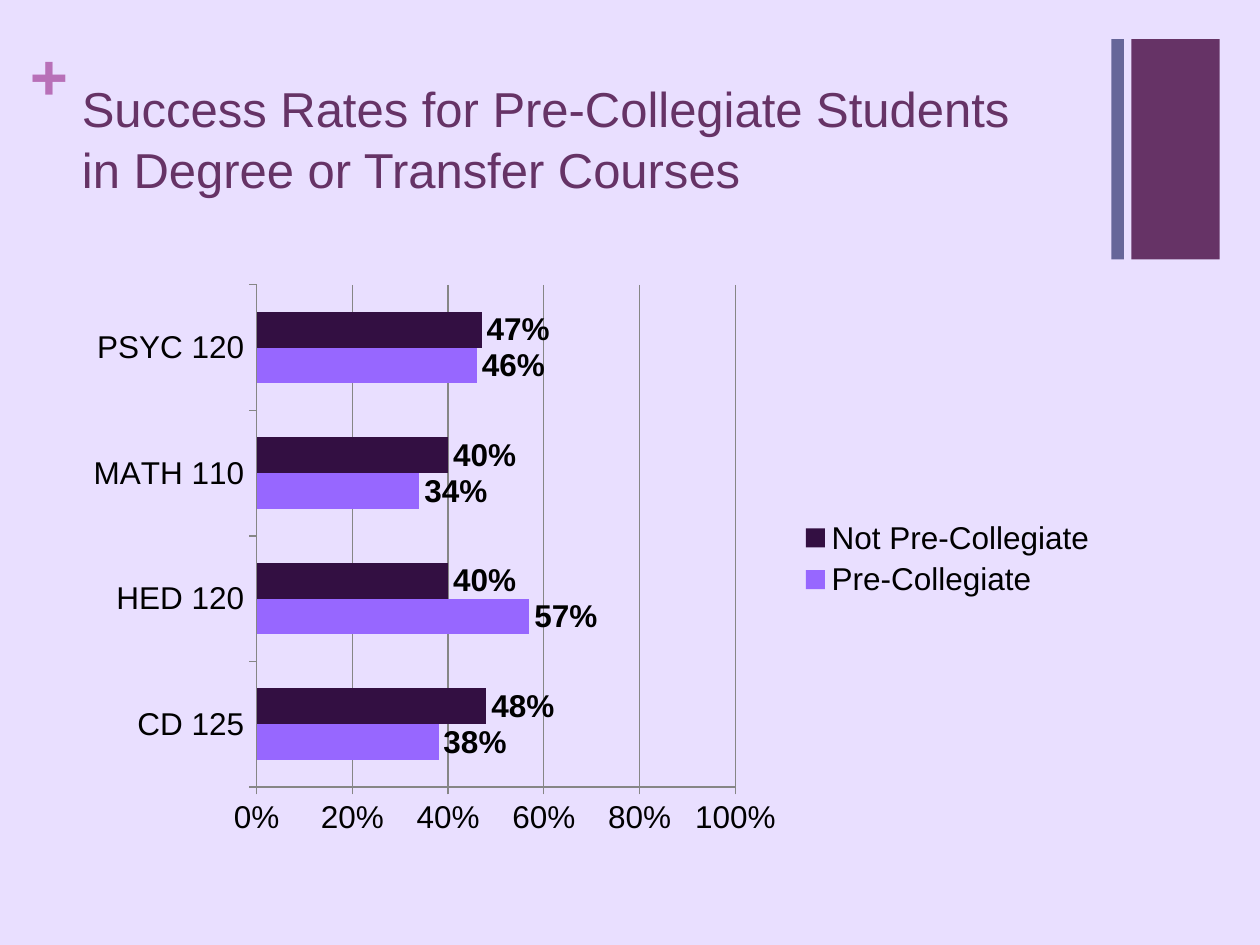
from dataclasses import dataclass

from lxml.etree import SubElement
from pptx import Presentation
from pptx.chart.data import CategoryChartData
from pptx.dml.color import RGBColor
from pptx.enum.chart import XL_CHART_TYPE, XL_LABEL_POSITION, XL_LEGEND_POSITION, XL_TICK_MARK
from pptx.enum.shapes import MSO_SHAPE
from pptx.enum.text import MSO_ANCHOR, MSO_AUTO_SIZE, PP_ALIGN
from pptx.oxml.ns import qn
from pptx.util import Inches, Pt


@dataclass(frozen=True)
class Theme:
    background: str = "E9DFFF"
    plum: str = "663366"
    slate: str = "666699"
    orchid: str = "B870B8"
    violet: str = "9767FF"
    dark: str = "330F42"
    grid: str = "868686"
    black: str = "000000"
    sans: str = "Arial"
    serif: str = "TeX Gyre Bonum"
    title_size: int = 28
    plus_size: int = 36
    chart_size: int = 18


THEME = Theme()
COURSES = ("CD 125", "HED 120", "MATH 110", "PSYC 120")
SERIES = (
    ("Pre-Collegiate", (0.38, 0.57, 0.34, 0.46), THEME.violet),
    ("Not Pre-Collegiate", (0.48, 0.40, 0.40, 0.47), THEME.dark),
)
PLOT_AREA = {"x": 0.18, "y": 0.02, "w": 0.46, "h": 0.88}


def set_values(target, values):
    for name, value in values.items():
        setattr(target, name, value)


def format_font(font, color, **values):
    set_values(font, values)
    font.color.rgb = RGBColor.from_string(color)


def place(shape, left, top, width, height):
    set_values(shape, {"left": Inches(left), "top": Inches(top),
                       "width": Inches(width), "height": Inches(height)})


def add_bar(slide, left, width, color):
    bar = slide.shapes.add_shape(MSO_SHAPE.RECTANGLE, Inches(left), Inches(0.31),
                                 Inches(width), Inches(1.75))
    bar.shadow.inherit = False
    bar.fill.solid()
    bar.fill.fore_color.rgb = RGBColor.from_string(color)
    bar.line.fill.background()


def add_plus(slide):
    box = slide.shapes.add_textbox(Inches(0.24), Inches(0.25), Inches(0.29), Inches(0.61))
    set_values(box.text_frame, {"margin_left": 0, "margin_right": 0,
                                "margin_top": 0, "margin_bottom": 0})
    span = box.text_frame.paragraphs[0].add_run()
    span.text = "+"
    format_font(span.font, THEME.orchid, name=THEME.serif,
                size=Pt(THEME.plus_size), bold=True)


def fill_title(slide):
    title = slide.shapes.title
    place(title, 0.55, 0.53, 8.26, 1.22)
    set_values(title.text_frame, {"auto_size": MSO_AUTO_SIZE.NONE, "word_wrap": True,
                                  "vertical_anchor": MSO_ANCHOR.TOP,
                                  "margin_top": Inches(0.08)})
    para = title.text_frame.paragraphs[0]
    para.text = "Success Rates for Pre-Collegiate Students \vin Degree or Transfer Courses"
    set_values(para, {"alignment": PP_ALIGN.LEFT, "line_spacing": 1.03})
    for span in para.runs:
        format_font(span.font, THEME.plum, name=THEME.sans, size=Pt(THEME.title_size))


def set_plot_area(chart):
    """Fix the inner plot area as fractions of the chart."""
    plot_area = chart.element.find(".//" + qn("c:plotArea"))
    layout = plot_area.find(qn("c:layout"))
    if layout is None:
        layout = SubElement(plot_area, qn("c:layout"))
        plot_area.insert(0, layout)
    manual = SubElement(layout, qn("c:manualLayout"))
    settings = {"layoutTarget": "inner", "xMode": "edge", "yMode": "edge", **PLOT_AREA}
    for name, value in settings.items():
        SubElement(manual, qn(f"c:{name}")).set("val", str(value))


def format_axes(chart):
    grid_color = RGBColor.from_string(THEME.grid)
    value_axis = chart.value_axis
    set_values(value_axis, {"minimum_scale": 0, "maximum_scale": 1, "major_unit": 0.2,
                            "has_major_gridlines": True})
    set_values(value_axis.tick_labels, {"number_format": "0%",
                                        "number_format_is_linked": False})
    value_axis.major_gridlines.format.line.color.rgb = grid_color
    for axis in (chart.category_axis, value_axis):
        axis.major_tick_mark = XL_TICK_MARK.OUTSIDE
        axis.format.line.color.rgb = grid_color
        format_font(axis.tick_labels.font, THEME.black, name=THEME.sans,
                    size=Pt(THEME.chart_size))


def format_series(series, color):
    series.format.fill.solid()
    series.format.fill.fore_color.rgb = RGBColor.from_string(color)
    labels = series.data_labels
    set_values(labels, {"show_value": True, "number_format": "0%",
                        "number_format_is_linked": False,
                        "position": XL_LABEL_POSITION.OUTSIDE_END})
    format_font(labels.font, THEME.black, name=THEME.sans,
                size=Pt(THEME.chart_size), bold=True)


def add_success_chart(slide):
    data = CategoryChartData(number_format="0%")
    data.categories = COURSES
    for name, rates, _ in SERIES:
        data.add_series(name, rates)
    chart = slide.shapes.add_chart(XL_CHART_TYPE.BAR_CLUSTERED, Inches(0.55), Inches(2.17),
                                   Inches(8.26), Inches(4.53), data).chart
    set_values(chart, {"has_title": False, "has_legend": True})
    format_font(chart.font, THEME.black, name=THEME.serif, size=Pt(THEME.chart_size))
    set_values(chart.legend, {"position": XL_LEGEND_POSITION.RIGHT,
                              "include_in_layout": False})
    format_font(chart.legend.font, THEME.black, name=THEME.sans, size=Pt(THEME.chart_size))
    set_values(chart.plots[0], {"gap_width": 150, "overlap": 0, "vary_by_categories": False})
    format_axes(chart)
    for series, (_, _, color) in zip(chart.plots[0].series, SERIES):
        format_series(series, color)
    set_plot_area(chart)


def main():
    deck = Presentation()
    set_values(deck, {"slide_width": Inches(10), "slide_height": Inches(7.5)})
    slide = deck.slides.add_slide(deck.slide_layouts.get_by_name("Title Only"))
    slide.background.fill.solid()
    slide.background.fill.fore_color.rgb = RGBColor.from_string(THEME.background)
    add_bar(slide, 8.98, 0.7, THEME.plum)
    add_plus(slide)
    add_bar(slide, 8.82, 0.1, THEME.slate)
    fill_title(slide)
    add_success_chart(slide)
    deck.save("out.pptx")


if __name__ == "__main__":
    main()
